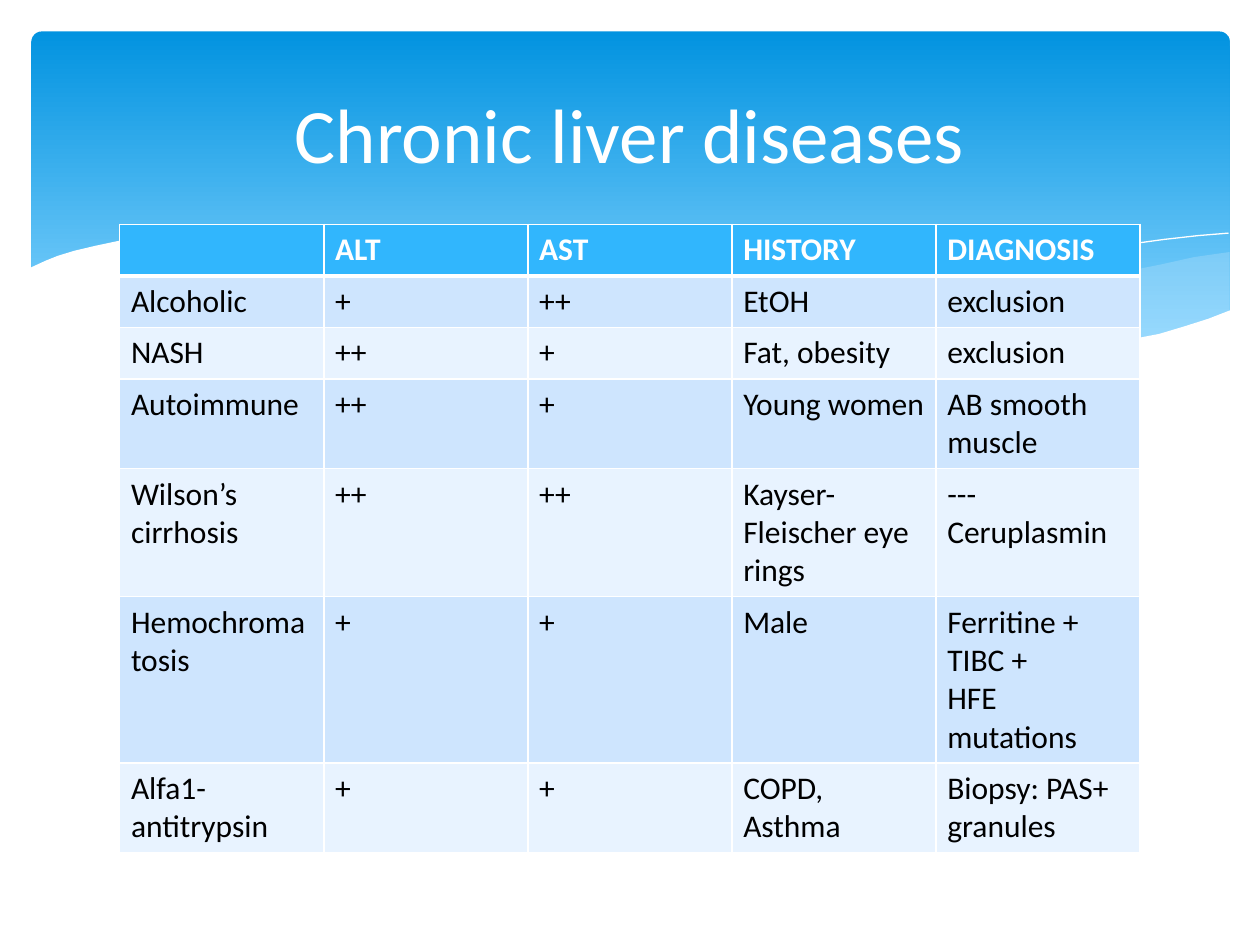
from lxml.etree import SubElement
from pptx import Presentation
from pptx.dml.color import RGBColor
from pptx.enum.shapes import MSO_SHAPE as SHAPE
from pptx.enum.text import MSO_ANCHOR as ANCHOR, PP_ALIGN as ALIGN
from pptx.oxml import parse_xml
from pptx.oxml.ns import nsdecls, qn
from pptx.util import Inches, Pt

WHITE = RGBColor(0xFF, 0xFF, 0xFF)
BLACK = RGBColor(0x00, 0x00, 0x00)
DEEP_BLUE = RGBColor(0x02, 0x93, 0xE0)
SKY_BLUE = RGBColor(0x83, 0xD3, 0xFE)
WAVE_BLUE = RGBColor(0xC6, 0xE7, 0xFC)
HEADER_BLUE = RGBColor(0x31, 0xB6, 0xFD)
BAND_DARK = RGBColor(0xCE, 0xE5, 0xFE)
BAND_LIGHT = RGBColor(0xE8, 0xF3, 0xFF)

TITLE = {"name": "Calibri", "size": Pt(44), "bold": False}
HEADER = {"name": "Calibri", "size": Pt(18), "bold": True}
BODY = {"name": "Calibri", "size": Pt(18), "bold": False}

# Wave outlines, in inches
RIGHT_WAVE = [
    (9.76, 2), (9.48, 2.04), (9.21, 2.1), (8.91, 2.16), (8.61, 2.23),
    (8.05, 2.37), (7.53, 2.48), (7.06, 2.57), (6.61, 2.65), (6.91, 2.69),
    (7.19, 2.72), (7.45, 2.75), (7.69, 2.77), (8.03, 2.78), (8.35, 2.77),
    (8.63, 2.75), (8.89, 2.72), (9.13, 2.67), (9.35, 2.62), (9.49, 2.57),
    (9.63, 2.52), (9.76, 2.47)]
MIDDLE_WAVE = [
    (8.93, 2.73), (8.66, 2.69), (8.37, 2.65), (8.07, 2.6), (7.75, 2.54),
    (7.41, 2.47), (7.06, 2.4), (6.68, 2.31), (6.29, 2.22), (5.98, 2.14),
    (5.69, 2.08), (5.41, 2.03), (5.14, 1.98), (4.89, 1.94), (4.65, 1.91),
    (4.42, 1.89), (4.2, 1.87), (3.99, 1.86), (3.8, 1.85), (3.61, 1.85),
    (3.28, 1.87), (2.99, 1.89), (2.86, 1.91), (3.23, 1.96), (3.62, 2.03),
    (4.04, 2.11), (4.49, 2.22), (4.91, 2.32), (5.3, 2.4), (5.66, 2.48),
    (6.01, 2.55), (6.34, 2.61), (6.65, 2.66), (6.95, 2.7), (7.22, 2.74),
    (7.48, 2.76), (7.73, 2.77), (7.96, 2.78), (8.28, 2.78), (8.57, 2.77),
    (8.76, 2.75)]
LONG_LINE = [
    (3.09, 1.95), (3.28, 1.92), (3.53, 1.89), (3.87, 1.87), (4.16, 1.87),
    (4.5, 1.88), (4.89, 1.9), (5.33, 1.94), (5.82, 2), (6.36, 2.08),
    (6.95, 2.19), (7.6, 2.33), (7.95, 2.41), (8.31, 2.51), (9.07, 2.72)]
SHORT_LINE = [
    (6.13, 2.57), (6.53, 2.46), (6.95, 2.35), (7.48, 2.23), (8.06, 2.1),
    (8.66, 1.99), (8.95, 1.94), (9.24, 1.9), (9.51, 1.87), (9.75, 1.85)]
WHITE_SWEEP = [
    (9.77, 2.46), (9.59, 2.53), (9.4, 2.59), (9.2, 2.65), (8.99, 2.69),
    (8.75, 2.73), (8.5, 2.75), (8.23, 2.77), (7.93, 2.76), (7.61, 2.75),
    (7.26, 2.72), (6.88, 2.68), (6.48, 2.62), (6.03, 2.54), (5.55, 2.45),
    (5.03, 2.33), (4.47, 2.2), (3.91, 2.07), (3.65, 2.02), (3.4, 1.97),
    (3.16, 1.94), (2.92, 1.9), (2.71, 1.88), (2.5, 1.86), (2.3, 1.85),
    (2.11, 1.84), (1.77, 1.84), (1.46, 1.85), (1.19, 1.87), (0.95, 1.91),
    (0.76, 1.95), (0.59, 1.99), (0.46, 2.03), (0.36, 2.07), (0.23, 2.13),
    (0.23, 3.29), (9.77, 3.29)]

ROWS = [
    ["", "ALT", "AST", "HISTORY", "DIAGNOSIS"],
    ["Alcoholic", "+", "++", "EtOH", "exclusion"],
    ["NASH", "++", "+", "Fat, obesity", "exclusion"],
    ["Autoimmune", "++", "+", "Young women", "AB smooth muscle"],
    ["Wilson’s cirrhosis", "++", "++", "Kayser-Fleischer eye rings",
     "--- Ceruplasmin"],
    ["Hemochromatosis", "+", "+", "Male",
     "Ferritine +\nTIBC +\nHFE mutations"],
    ["Alfa1-antitrypsin", "+", "+", "COPD, Asthma", "Biopsy: PAS+ granules"],
]


class SlideBuilder:
    def __init__(self, prs):
        self.s = prs.slides.add_slide(prs.slide_layouts[5])

    def format_text(self, tf, style, color):
        for p in tf.paragraphs:
            for r in p.runs:
                for name, value in style.items():
                    setattr(r.font, name, value)
                r.font.color.rgb = color

    def title(self, text, left, top, width, height):
        sp = self.s.shapes.title
        sp.left, sp.top = Inches(left), Inches(top)
        sp.width, sp.height = Inches(width), Inches(height)
        tf = sp.text_frame
        tf.text = text
        tf.word_wrap = True
        tf.vertical_anchor = ANCHOR.MIDDLE
        tf.paragraphs[0].alignment = ALIGN.CENTER
        self.format_text(tf, TITLE, WHITE)
        # Bring the title in front of the banner
        sp.element.getparent().append(sp.element)

    def banner(self, left, top, width, height):
        sp = self.s.shapes.add_shape(
            SHAPE.ROUNDED_RECTANGLE, Inches(left), Inches(top),
            Inches(width), Inches(height))
        sp.adjustments[0] = 0.03
        sp.shadow.inherit = False
        sp.line.fill.background()
        sp.fill.gradient()
        sp.fill.gradient_angle = 270
        stops = zip(sp.fill.gradient_stops, (0, 0.9), (DEEP_BLUE, SKY_BLUE))
        for stop, position, color in stops:
            stop.position = position
            stop.color.rgb = color

    def outline(self, points, closed):
        pts = [(Inches(x), Inches(y)) for x, y in points]
        builder = self.s.shapes.build_freeform(*pts[0])
        builder.add_line_segments(pts[1:], close=closed)
        sp = builder.convert_to_shape()
        sp.shadow.inherit = False
        return sp

    def wave(self, points, color, opacity=100):
        sp = self.outline(points, True)
        sp.line.fill.background()
        sp.fill.solid()
        sp.fill.fore_color.rgb = color
        if opacity < 100:
            clr = sp.element.spPr.find(qn("a:solidFill"))[0]
            SubElement(clr, qn("a:alpha"), val=str(opacity * 1000))

    def curve(self, points):
        sp = self.outline(points, False)
        sp.fill.background()
        sp.line.color.rgb = WHITE
        sp.line.width = Pt(0)

    def borders(self, cell, top, bottom):
        tc_pr = cell._tc.get_or_add_tcPr()
        widths = {"lnL": 1, "lnR": 1, "lnT": top, "lnB": bottom}
        for i, (tag, width) in enumerate(widths.items()):
            tc_pr.insert(i, parse_xml(
                f'<a:{tag} {nsdecls("a")} w="{Pt(width)}"><a:solidFill>'
                f'<a:srgbClr val="{WHITE}"/></a:solidFill></a:{tag}>'))

    def table(self, rows, left, top, col_width, row_height):
        n_rows, n_cols = len(rows), len(rows[0])
        table = self.s.shapes.add_table(
            n_rows, n_cols, Inches(left), Inches(top),
            Inches(col_width * n_cols), Inches(row_height * n_rows)).table
        for i, row in enumerate(rows):
            if i == 0:
                style, color, fill = HEADER, WHITE, HEADER_BLUE
            else:
                style, color = BODY, BLACK
                fill = BAND_DARK if i % 2 else BAND_LIGHT
            for j, text in enumerate(row):
                cell = table.cell(i, j)
                cell.text = text
                cell.margin_left = cell.margin_right = Inches(0.09)
                cell.margin_top = cell.margin_bottom = Inches(0.05)
                cell.fill.solid()
                cell.fill.fore_color.rgb = fill
                self.borders(cell, 3 if i == 1 else 1, 3 if i == 0 else 1)
                self.format_text(cell.text_frame, style, color)


def main():
    prs = Presentation()
    prs.slide_width, prs.slide_height = Inches(10), Inches(7.5)
    slide = SlideBuilder(prs)

    # Banner with waves
    slide.banner(0.25, 0.25, 9.51, 2.7)
    slide.wave(RIGHT_WAVE, WAVE_BLUE, 29)
    slide.wave(MIDDLE_WAVE, WAVE_BLUE, 40)
    slide.curve(LONG_LINE)
    slide.curve(SHORT_LINE)
    slide.wave(WHITE_SWEEP, WHITE)

    # Disease table and title
    slide.table(ROWS, 0.95, 1.78, 1.62, 0.41)
    slide.title("Chronic liver diseases", 0.5, 0.37, 9, 1.37)

    prs.save("out.pptx")


if __name__ == "__main__":
    main()
